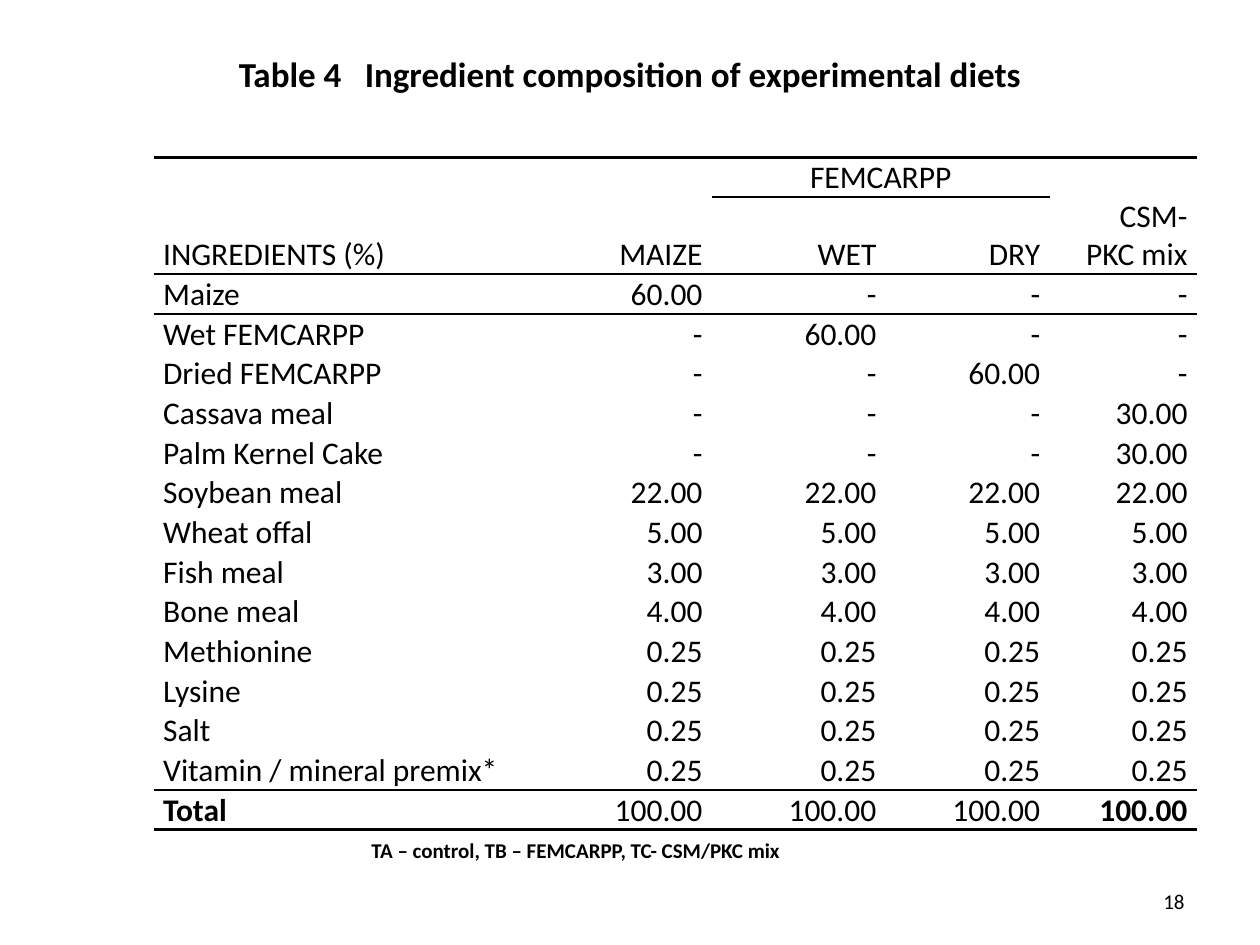
from dataclasses import dataclass

from lxml.etree import SubElement
from pptx import Presentation
from pptx.dml.color import RGBColor
from pptx.enum.text import MSO_ANCHOR, PP_ALIGN
from pptx.oxml.ns import qn
from pptx.util import Pt

FONT = "Calibri"
BLACK, WHITE = "000000", "FFFFFF"
NO_STYLE_NO_GRID = "{2D5ABB26-0587-4C30-8999-92F81FD0307C}"

HEADER_ROWS = [
    ["INGREDIENTS (%)", "MAIZE", "FEMCARPP", "", "CSM-\nPKC mix"],
    ["", "", "WET", "DRY", ""],
]
MERGES = [((0, 0), (1, 0)), ((0, 1), (1, 1)), ((0, 2), (0, 3)), ((0, 4), (1, 4))]
COLUMN_WIDTHS = [230.4, 88.56, 99.36, 93.6, 84.24]
ROW_HEIGHT = 22.68


@dataclass
class Ingredient:
    name: str
    shares: list[str]


@dataclass
class Rule:
    """A horizontal line below a row, or above it when edge is lnT."""
    row: int
    edge: str
    columns: range
    width: float


@dataclass
class Label:
    text: str
    left: float
    top: float
    width: float
    height: float
    align: PP_ALIGN
    bold: bool = False


INGREDIENTS = [
    Ingredient("Maize", ["60.00", "-", "-", "-"]),
    Ingredient("Wet FEMCARPP", ["-", "60.00", "-", "-"]),
    Ingredient("Dried FEMCARPP", ["-", "-", "60.00", "-"]),
    Ingredient("Cassava meal", ["-", "-", "-", "30.00"]),
    Ingredient("Palm Kernel Cake", ["-", "-", "-", "30.00"]),
    Ingredient("Soybean meal", ["22.00"] * 4),
    Ingredient("Wheat offal", ["5.00"] * 4),
    Ingredient("Fish meal", ["3.00"] * 4),
    Ingredient("Bone meal", ["4.00"] * 4),
    Ingredient("Methionine", ["0.25"] * 4),
    Ingredient("Lysine", ["0.25"] * 4),
    Ingredient("Salt", ["0.25"] * 4),
    Ingredient("Vitamin / mineral premix*", ["0.25"] * 4),
    Ingredient("Total", ["100.00"] * 4),
]
ROWS = HEADER_ROWS + [[item.name, *item.shares] for item in INGREDIENTS]
TOTAL_ROW = len(ROWS) - 1
ALL_COLUMNS = range(len(COLUMN_WIDTHS))
FEMCARPP_COLUMNS = range(2, 4)
RULES = [
    Rule(0, "lnT", ALL_COLUMNS, 2),
    Rule(0, "lnB", FEMCARPP_COLUMNS, 1),
    Rule(1, "lnT", FEMCARPP_COLUMNS, 1),
    Rule(1, "lnB", ALL_COLUMNS, 1),
    Rule(2, "lnT", ALL_COLUMNS, 1),
    Rule(2, "lnB", ALL_COLUMNS, 1),
    Rule(TOTAL_ROW - 1, "lnB", ALL_COLUMNS, 1),
    Rule(TOTAL_ROW, "lnT", ALL_COLUMNS, 1),
    Rule(TOTAL_ROW, "lnB", ALL_COLUMNS, 2),
]
LABELS = [
    Label("18", 516, 500.4, 168, 28.8, PP_ALIGN.RIGHT),
    Label("TA – control, TB – FEMCARPP, TC- CSM/PKC mix",
          184.32, 468.72, 289.44, 33.84, PP_ALIGN.CENTER, bold=True),
]


def set_color(color_holder, color: str) -> None:
    """Colour a solid fill or a font."""
    if hasattr(color_holder, "solid"):
        color_holder.solid()
        color_holder.fore_color.rgb = RGBColor.from_string(color)
    else:
        color_holder.color.rgb = RGBColor.from_string(color)


def format_text(frame, size: float, align: PP_ALIGN, bold: bool = False) -> None:
    for paragraph in frame.paragraphs:
        paragraph.alignment = align
        paragraph.font.name = FONT
        paragraph.font.size = Pt(size)
        paragraph.font.bold = bold
        set_color(paragraph.font, BLACK)


def place(shape, left: float, top: float, width: float, height: float) -> None:
    shape.left, shape.top = Pt(left), Pt(top)
    shape.width, shape.height = Pt(width), Pt(height)


def add_border(cell, edge: str, width: float) -> None:
    properties = cell._tc.get_or_add_tcPr()
    line = SubElement(properties, qn(f"a:{edge}"), w=str(Pt(width)))
    SubElement(SubElement(line, qn("a:solidFill")), qn("a:srgbClr"), val=BLACK)


def fill_cell(cell, text: str, align: PP_ALIGN, bold: bool) -> None:
    cell.text = text
    cell.margin_left = cell.margin_right = Pt(5.4)
    cell.margin_top = cell.margin_bottom = 0
    cell.vertical_anchor = MSO_ANCHOR.BOTTOM
    format_text(cell.text_frame, 18, align, bold)
    set_color(cell.fill, WHITE)


def add_diet_table(slide) -> None:
    frame = slide.shapes.add_table(
        len(ROWS), len(COLUMN_WIDTHS), Pt(87.84), Pt(90),
        Pt(sum(COLUMN_WIDTHS)), Pt(ROW_HEIGHT * len(ROWS)))
    table = frame.table
    table.first_row = table.horz_banding = False
    table._tbl.tblPr.find(qn("a:tableStyleId")).text = NO_STYLE_NO_GRID
    for column, width in zip(table.columns, COLUMN_WIDTHS):
        column.width = Pt(width)
    for row in table.rows:
        row.height = Pt(ROW_HEIGHT)
    for rule in RULES:
        for column in rule.columns:
            add_border(table.cell(rule.row, column), rule.edge, rule.width)
    for row, texts in enumerate(ROWS):
        for column, text in enumerate(texts):
            if column == 0:
                align = PP_ALIGN.JUSTIFY
            else:
                align = PP_ALIGN.CENTER if text == "FEMCARPP" else PP_ALIGN.RIGHT
            bold = row == TOTAL_ROW and column in (0, ALL_COLUMNS[-1])
            fill_cell(table.cell(row, column), text, align, bold)
    for first, last in MERGES:
        table.cell(*first).merge(table.cell(*last))


def add_label(slide, label: Label) -> None:
    box = slide.shapes.add_textbox(
        Pt(label.left), Pt(label.top), Pt(label.width), Pt(label.height))
    box.text_frame.word_wrap = True
    box.text_frame.vertical_anchor = MSO_ANCHOR.MIDDLE
    box.text_frame.text = label.text
    format_text(box.text_frame, 12, label.align, label.bold)


def main() -> None:
    presentation = Presentation()
    presentation.slide_width, presentation.slide_height = Pt(720), Pt(540)
    slide = presentation.slides.add_slide(presentation.slide_layouts[5])
    title = slide.shapes.title
    place(title, 36, 21.6, 648, 40.32)
    title.text_frame.text = "Table 4\tIngredient composition of experimental diets"
    title.text_frame.vertical_anchor = MSO_ANCHOR.MIDDLE
    format_text(title.text_frame, 20, PP_ALIGN.CENTER, bold=True)
    add_diet_table(slide)
    for label in LABELS:
        add_label(slide, label)
    presentation.save("out.pptx")


if __name__ == "__main__":
    main()
